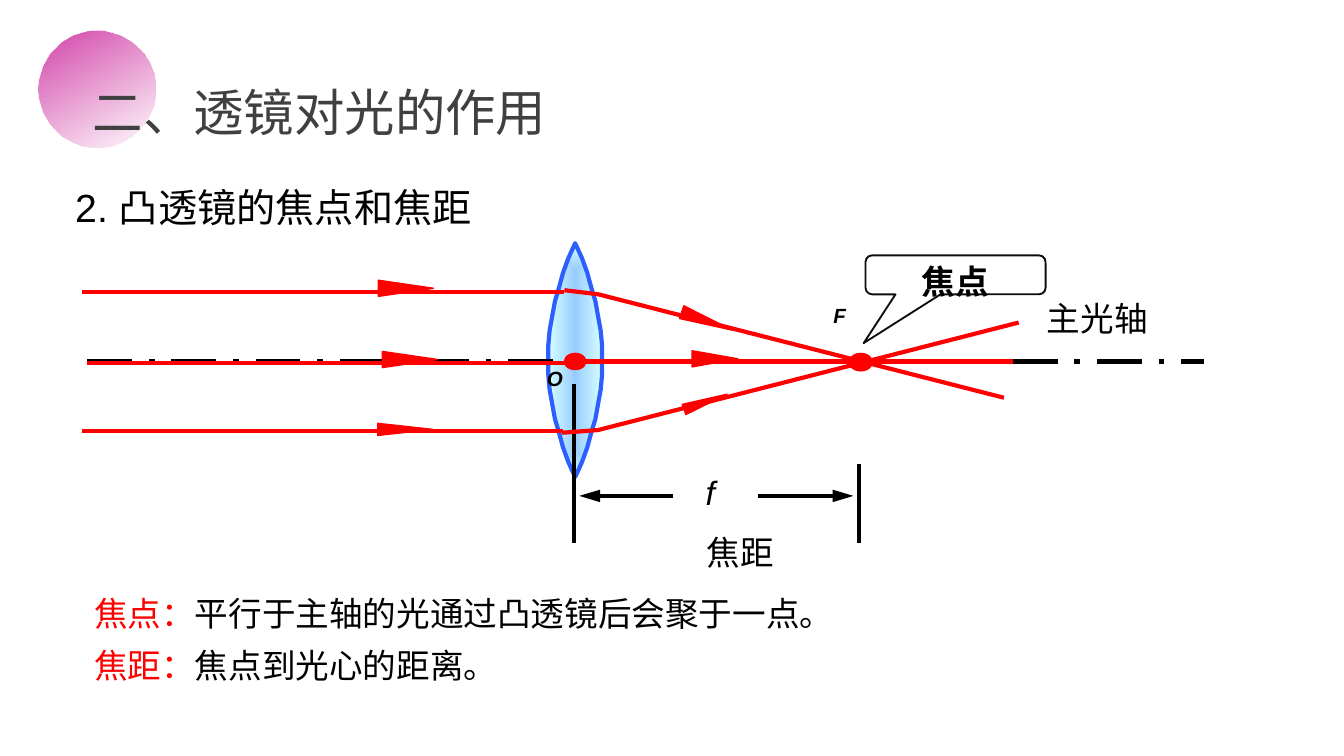
import pptx
import pptx.util
import pptx.dml.color
import pptx.enum.dml
import pptx.enum.shapes
import pptx.enum.text
import pptx.oxml
import pptx.oxml.ns

PX = 9144  # 100 px to the inch
COLOURS = {"ray": "FF0000", "ink": "000000", "title": "404040", "paper": "FFFFFF",
           "disc": "D343A9", "lens_core": "99CCFF", "lens_rim": "D5FFFF",
           "lens_edge": "2D5FFF", "callout": "0D0D0D"}
RGB = {name: pptx.dml.color.RGBColor.from_string(value) for name, value in COLOURS.items()}
KINDS = pptx.enum.shapes.MSO_SHAPE
ALIGN = pptx.enum.text.PP_ALIGN
ANCHOR = pptx.enum.text.MSO_ANCHOR
NS = pptx.oxml.ns.nsdecls("a")

# Widescreen slide, 16:9
deck = pptx.Presentation()
deck.slide_width = 1000 * PX
deck.slide_height = deck.slide_width * 9 // 16
slide = deck.slides.add_slide(deck.slide_layouts[6])
shapes = slide.shapes


def paint(part, fill=None, line=None, width=0.75):
    part.shadow.inherit = False
    for target, colour in ((part.fill, fill), (part.line.fill, line)):
        if colour:
            target.solid()
            target.fore_color.rgb = RGB[colour]
        else:
            target.background()
    if line:
        part.line.width = pptx.util.Pt(width)


def write(part, paragraphs, size, spacing=1.3, align=ALIGN.LEFT, anchor=ANCHOR.TOP,
          side=7, wrap=True, **style):
    frame = part.text_frame
    layout = {"word_wrap": wrap, "vertical_anchor": anchor,
              "margin_left": side * PX, "margin_right": side * PX,
              "margin_top": 4 * PX, "margin_bottom": 4 * PX}
    for name, value in layout.items():
        setattr(frame, name, value)
    for index, runs in enumerate(paragraphs):
        paragraph = frame.paragraphs[0] if index == 0 else frame.add_paragraph()
        paragraph.alignment, paragraph.line_spacing = align, spacing
        for words, colour in runs:
            run = paragraph.add_run()
            run.text = words
            font = {"name": "Arial", "size": pptx.util.Pt(size), **style}
            for name, value in font.items():
                setattr(run.font, name, value)
            run.font.color.rgb = RGB[colour]


# Fading disc behind the title
disc = shapes.add_shape(KINDS.OVAL, 29 * PX, 23 * PX, 87 * PX, 87 * PX)
paint(disc)
disc.fill.gradient()
disc.fill.gradient_angle = 300
for stop, position in zip(disc.fill.gradient_stops, (0, 1)):
    stop.color.rgb, stop.position = RGB["disc"], position
clear = disc.fill._xPr.findall(".//" + pptx.oxml.ns.qn("a:srgbClr"))[-1]
clear.append(pptx.oxml.parse_xml(f'<a:alpha {NS} val="0"/>'))

# Convex lens: the right side mirrors the left
LENS_X, LENS_TOP, LENS_BOTTOM = 428, 181, 355
half_widths = [0, 5, 9, 12, 15, 17, 19, 20, 20, 20, 19, 17, 15, 12, 9, 5, 0]
step = (LENS_BOTTOM - LENS_TOP) / (len(half_widths) - 1)
left_side = [(LENS_X - half, LENS_TOP + row * step) for row, half in enumerate(half_widths)]
right_side = [(2 * LENS_X - x, y) for x, y in reversed(left_side)]
outline = shapes.build_freeform(*left_side[0], scale=PX)
outline.add_line_segments(left_side[1:] + right_side[1:-1], close=True)
lens = outline.convert_to_shape()
paint(lens, line="lens_edge", width=2.25)
lens.fill.gradient()
for stop, colour, position in zip(lens.fill.gradient_stops, ("lens_core", "lens_rim"), (0, 1)):
    stop.color.rgb, stop.position = RGB[colour], position
direction = lens.fill._xPr.find(".//" + pptx.oxml.ns.qn("a:lin"))
direction.getparent().replace(direction, pptx.oxml.parse_xml(
    f'<a:path {NS} path="rect"><a:fillToRect l="50000" t="50000" r="50000" b="50000"/></a:path>'))

# Optical axis, straight rays, focal length markers
straight = [
    (65, 269, 896, 269, "ink", 3, "axis"),
    (61, 217, 420, 217, "ray", 2.25, None),
    (61, 321, 419, 321, "ray", 2.25, None),
    (65, 270, 422, 270, "ray", 2.25, None),
    (421, 269, 754, 269, "ray", 2.25, None),
    (639, 345, 639, 404, "ink", 2.25, None),
    (427, 286, 427, 404, "ink", 2.25, None),
    (501, 369, 431, 369, "ink", 2.25, "arrow"),
    (564, 369, 635, 369, "ink", 2.25, "arrow"),
]
for x1, y1, x2, y2, colour, width, ending in straight:
    line = shapes.add_connector(pptx.enum.shapes.MSO_CONNECTOR.STRAIGHT,
                                x1 * PX, y1 * PX, x2 * PX, y2 * PX)
    line.line.color.rgb = RGB[colour]
    line.line.width = pptx.util.Pt(width)
    if ending == "axis":
        line.line.dash_style = pptx.enum.dml.MSO_LINE.LONG_DASH_DOT
    if ending == "arrow":
        line.line._get_or_add_ln().append(
            pptx.oxml.parse_xml(f'<a:tailEnd {NS} type="triangle" w="med" len="lg"/>'))
    line._element.spPr.append(pptx.oxml.parse_xml(f"<a:effectLst {NS}/>"))

# Rays bent through the focus
for start, bend, end in (((418, 322), (445, 320), (758, 240)),
                         ((420, 216), (445, 219), (747, 296))):
    path = shapes.build_freeform(*start, scale=PX)
    path.add_line_segments([bend, end], close=False)
    paint(path.convert_to_shape(), line="ray", width=2.25)

# Ray direction heads, then optical centre and focus
marks = [
    (KINDS.ISOSCELES_TRIANGLE, 296, 194, 12, 41, 90),
    (KINDS.ISOSCELES_TRIANGLE, 297, 299, 9, 41, 90),
    (KINDS.ISOSCELES_TRIANGLE, 299, 247, 12, 41, 90),
    (KINDS.ISOSCELES_TRIANGLE, 521, 282, 8, 34, 70.5),
    (KINDS.ISOSCELES_TRIANGLE, 521, 219, 10, 40, 109.5),
    (KINDS.ISOSCELES_TRIANGLE, 526, 250, 12, 34, 90),
    (KINDS.OVAL, 420, 263, 16, 12, 0),
    (KINDS.OVAL, 632, 263, 17, 13, 0),
]
for kind, x, y, w, h, turn in marks:
    mark = shapes.add_shape(kind, x * PX, y * PX, w * PX, h * PX)
    mark.rotation = turn
    paint(mark, fill="ray", line="ray")

# Definitions
definitions = shapes.add_shape(KINDS.RECTANGLE, 63 * PX, 428 * PX, 732 * PX, 86 * PX)
paint(definitions, fill="paper")
write(definitions, [
    [("焦点：", "ray"), ("平行于主轴的光通过凸透镜后会聚于一点。", "ink")],
    [("焦距：", "ray"), ("焦点到光心的距离。", "ink")],
], 18)

# Title, heading and diagram labels
labels = [
    ("二、透镜对光的作用", 62, 56, 361, 53, 27, "title", {"spacing": 1.0}),
    ("2. 凸透镜的焦点和焦距", 49, 122, 516, 54, 21, "ink", {}),
    ("O", 400, 263, 87, 32, 11, "ink", {"bold": True, "italic": True}),
    ("F", 613, 216, 55, 32, 11, "ink", {"bold": True, "italic": True}),
    ("f", 518, 338, 27, 49, 18, "ink", {"italic": True}),
    ("焦距", 488, 383, 126, 47, 18, "ink", {"align": ALIGN.CENTER}),
    ("主光轴", 772, 209, 91, 47, 18, "ink", {}),
]
for words, x, y, w, h, size, colour, style in labels:
    label = shapes.add_textbox(x * PX, y * PX, w * PX, h * PX)
    write(label, [[(words, colour)]], size, **style)

# Callout naming the focus
callout = shapes.add_shape(KINDS.ROUNDED_RECTANGULAR_CALLOUT,
                           644 * PX, 190 * PX, 134 * PX, 29 * PX)
for index, value in enumerate((-0.51, 1.75, 0.17)):
    callout.adjustments[index] = value
paint(callout, line="callout", width=1)
write(callout, [[("焦点", "ink")]], 18, align=ALIGN.CENTER, anchor=ANCHOR.MIDDLE,
      side=0, wrap=False, bold=True)

deck.save("out.pptx")
